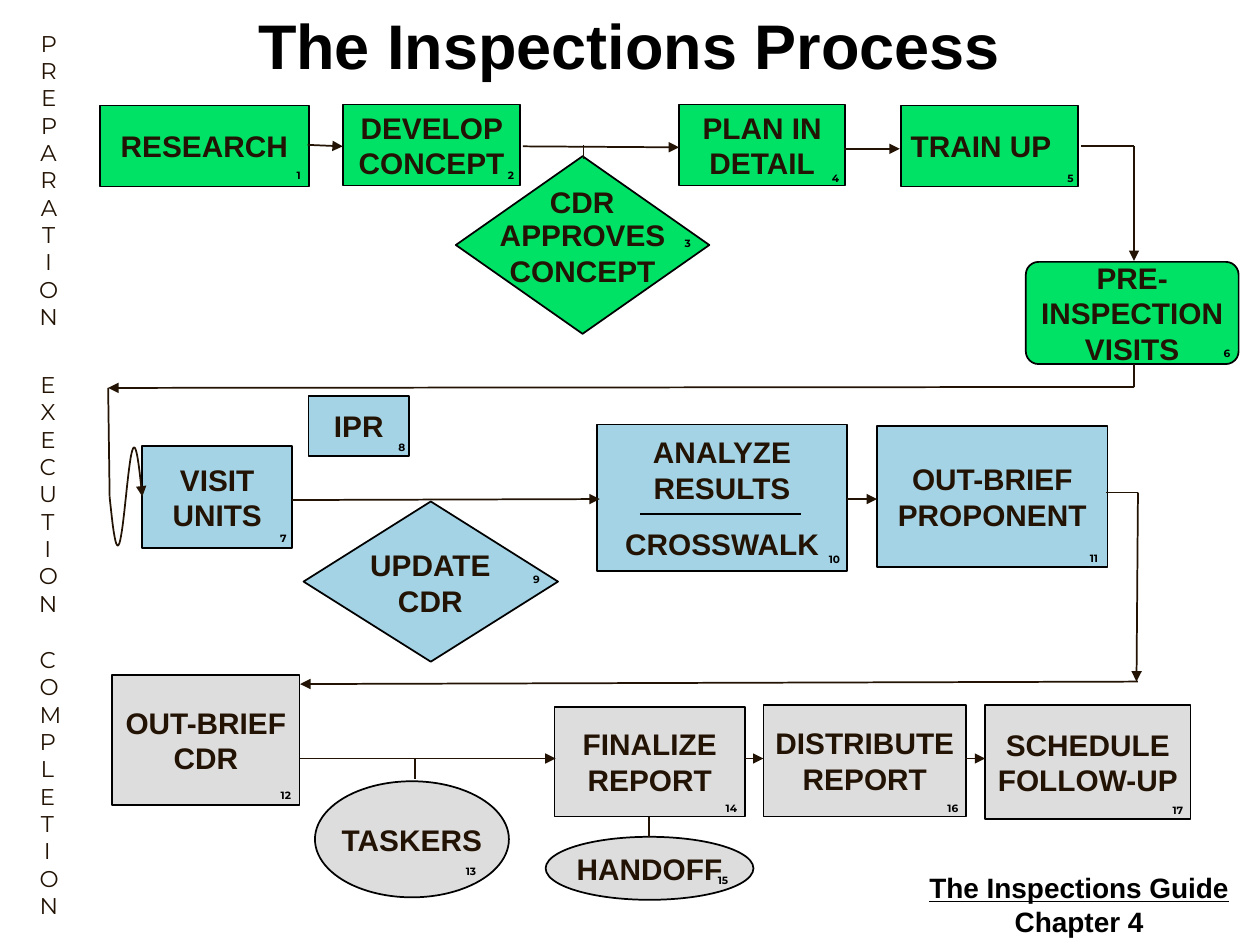
from dataclasses import dataclass
from math import pi, sin

from lxml.etree import SubElement
from pptx import Presentation
from pptx.dml.color import RGBColor as Rgb
from pptx.enum.shapes import MSO_CONNECTOR as Link, MSO_SHAPE as Form
from pptx.enum.text import MSO_ANCHOR as Anchor, MSO_AUTO_SIZE as Fit, PP_ALIGN as Align
from pptx.oxml.ns import qn
from pptx.util import Cm, Pt


@dataclass(frozen=True)
class Theme:
    green: str = "00E266"
    blue: str = "A3D3E4"
    gray: str = "DDDDDD"
    ink: str = "221304"
    black: str = "000000"
    body_font: str = "Arial"
    label_font: str = "Montserrat"
    title: int = 36
    step: int = 17
    footer: int = 16
    phase: int = 13
    number: int = 6


theme = Theme()


def write_text(box, text, size=theme.step, color=theme.ink, font=theme.body_font,
               bold=True, align=Align.CENTER, anchor=Anchor.MIDDLE, wrap=True,
               inset=(0.2, 0.1), fit=Fit.NONE, underline_first=False, last_gap=0):
    frame = box.text_frame
    frame.text = text
    frame.word_wrap = wrap
    frame.auto_size = fit
    frame.vertical_anchor = anchor
    frame.margin_left = frame.margin_right = Cm(inset[0])
    frame.margin_top = frame.margin_bottom = Cm(inset[1])
    for para in frame.paragraphs:
        para.alignment = align
        for span in para.runs:
            span.font.name = font
            span.font.size = Pt(size)
            span.font.bold = bold
            span.font.color.rgb = Rgb.from_string(color)
    if underline_first:
        frame.paragraphs[0].runs[0].font.underline = True
    if last_gap:
        frame.paragraphs[-1].space_before = Pt(last_gap)


def draw_line(shape, color=theme.ink, arrow=False):
    shape.line.color.rgb = Rgb.from_string(color)
    shape.line.width = Pt(1)
    properties = shape._element.spPr
    if arrow:
        SubElement(properties.find(qn("a:ln")), qn("a:tailEnd"), type="triangle")
    SubElement(properties, qn("a:effectLst"))


deck = Presentation()
deck.slide_width, deck.slide_height = Cm(25.4), Cm(19.05)
page = deck.slides.add_slide(deck.slide_layouts[5])
shapes = page.shapes

# Title
title = shapes.title
title.left, title.top, title.width, title.height = Cm(4.95), Cm(0), Cm(15.47), Cm(1.78)
write_text(title, "The Inspections Process", size=theme.title, color=theme.black,
           anchor=Anchor.TOP, wrap=False, inset=(0.25, 0.13), fit=Fit.SHAPE_TO_FIT_TEXT)

# Process steps: form, fill, left, top, width, height, text, text format
one_line = {"wrap": False}
steps = [
    (Form.RECTANGLE, theme.green, 2.01, 2.13, 4.22, 1.63, "RESEARCH", one_line),
    (Form.RECTANGLE, theme.green, 6.91, 2.11, 3.58, 1.63, "DEVELOP CONCEPT", {}),
    (Form.RECTANGLE, theme.green, 13.69, 2.11, 3.35, 1.63, "PLAN IN DETAIL", {}),
    (Form.RECTANGLE, theme.green, 18.16, 2.13, 3.58, 1.63, "TRAIN UP",
     {"wrap": False, "align": Align.LEFT}),
    (Form.DIAMOND, theme.green, 9.19, 3.15, 5.11, 3.58, "", {}),
    (Form.ROUNDED_RECTANGLE, theme.green, 20.68, 5.28, 4.29, 2.06,
     "PRE-INSPECTION VISITS", {}),
    (Form.RECTANGLE, theme.blue, 2.87, 8.99, 3.02, 2.06, "VISIT UNITS", {}),
    (Form.RECTANGLE, theme.blue, 6.22, 7.98, 2.03, 1.22, "IPR", one_line),
    (Form.RECTANGLE, theme.blue, 12.04, 8.56, 5.03, 2.95,
     "ANALYZE\nRESULTS\nCROSSWALK", {"wrap": False, "last_gap": 11.5}),
    (Form.RECTANGLE, theme.blue, 17.68, 8.59, 4.65, 2.84, "OUT-BRIEF PROPONENT", {}),
    (Form.DIAMOND, theme.blue, 6.12, 10.11, 5.13, 3.23, "", {}),
    (Form.RECTANGLE, theme.gray, 2.26, 13.61, 3.78, 2.62, "OUT-BRIEF CDR", {}),
    (Form.OVAL, theme.gray, 6.35, 15.75, 3.91, 2.34, "TASKERS", one_line),
    (Form.RECTANGLE, theme.gray, 11.18, 14.25, 3.84, 2.21, "FINALIZE REPORT", {}),
    (Form.OVAL, theme.gray, 11, 16.87, 4.19, 1.27, "HANDOFF", one_line),
    (Form.RECTANGLE, theme.gray, 15.39, 14.22, 4.09, 2.24, "DISTRIBUTE REPORT", {}),
    (Form.RECTANGLE, theme.gray, 19.86, 14.22, 4.14, 2.29, "SCHEDULE FOLLOW-UP", {}),
]
for form, fill, left, top, width, height, text, text_format in steps:
    step = shapes.add_shape(form, Cm(left), Cm(top), Cm(width), Cm(height))
    if form == Form.ROUNDED_RECTANGLE:
        step.adjustments[0] = 0.125
    step.fill.solid()
    step.fill.fore_color.rgb = Rgb.from_string(fill)
    draw_line(step, theme.black)
    if text:
        write_text(step, text, **text_format)

# Captions over the decision diamonds
for left, top, width, height, text in [
    (10.82, 3.61, 1.83, 0.91, "CDR"),
    (9.42, 4.27, 4.65, 1.65, "APPROVES CONCEPT"),
    (7.14, 10.92, 3.07, 1.65, "UPDATE CDR"),
]:
    caption = shapes.add_textbox(Cm(left), Cm(top), Cm(width), Cm(height))
    write_text(caption, text, anchor=Anchor.TOP, fit=Fit.SHAPE_TO_FIT_TEXT)

# Flow arrows and plain lines: start x, start y, end x, end y
arrows = [
    (6.2, 2.92, 6.91, 2.95), (10.54, 2.95, 13.69, 2.97), (17.02, 3, 18.14, 3),
    (22.86, 2.95, 22.86, 5.26), (22.86, 7.8, 2.18, 7.82),
    (5.89, 10.08, 12.09, 10.06), (17.07, 10.06, 17.68, 10.06),
    (22.94, 9.93, 22.91, 13.74), (22.94, 13.74, 6.05, 13.79),
    (6.05, 15.29, 11.2, 15.29), (15.01, 15.29, 15.39, 15.29),
    (19.46, 15.29, 19.86, 15.29),
]
plain_lines = [
    (22.86, 2.95, 21.79, 2.95), (11.76, 3.2, 11.76, 2.92), (22.86, 7.8, 22.86, 7.34),
    (2.21, 10.01, 2.18, 7.82), (22.3, 9.93, 22.94, 9.93),
    (8.36, 15.7, 8.36, 15.29), (13.08, 16.87, 13.08, 16.46),
]
divider = (12.9, 10.36, 16.15, 10.36)
for ends in arrows + plain_lines + [divider]:
    link = shapes.add_connector(Link.STRAIGHT, *[Cm(value) for value in ends])
    draw_line(link, theme.black if ends == divider else theme.ink, ends in arrows)

# Wave leading into the unit visits
wave_points = [(Cm(2.21 + 0.66 * i / 40), Cm(10.01 + 0.99 * sin(2 * pi * i / 40)))
               for i in range(41)]
builder = shapes.build_freeform(*wave_points[0])
builder.add_line_segments(wave_points[1:], close=False)
wave = builder.convert_to_shape()
wave.fill.background()
draw_line(wave, arrow=True)

# Phase names, running down the left edge
for left, top, width, height, text in [
    (-2.26, 3.35, 6.48, 0.58, "PREPARATION"),
    (-1.65, 9.63, 5.23, 0.56, "EXECUTION"),
    (-1.93, 15.49, 5.77, 0.51, "COMPLETION"),
]:
    phase = shapes.add_textbox(Cm(left), Cm(top), Cm(width), Cm(height))
    phase.rotation = 270
    write_text(phase, text, size=theme.phase, font=theme.label_font, bold=False,
               anchor=Anchor.TOP, fit=Fit.SHAPE_TO_FIT_TEXT)
    phase.text_frame._txBody.bodyPr.set("vert", "eaVert")

# Step numbers, in order
number_spots = [
    (5.77, 3.28), (10.03, 3.28), (13.59, 4.65), (16.56, 3.33), (21.31, 3.33),
    (24.46, 6.86), (5.44, 10.59), (7.82, 8.76), (10.54, 11.43), (16.46, 11.02),
    (21.72, 11), (5.41, 15.77), (9.14, 17.32), (14.38, 16.03), (14.22, 17.5),
    (18.85, 16.03), (23.39, 16.08),
]
for number, (left, top) in enumerate(number_spots, start=1):
    width = 0.46 if number < 10 else 0.89
    tag = shapes.add_textbox(Cm(left), Cm(top), Cm(width), Cm(0.51))
    write_text(tag, str(number), size=theme.number, color=theme.black,
               font=theme.label_font, align=Align.LEFT, anchor=Anchor.TOP,
               inset=(0.25, 0.13), fit=Fit.SHAPE_TO_FIT_TEXT)

# Chapter reference
footer = shapes.add_textbox(Cm(18.11), Cm(17.42), Cm(7.29), Cm(1.63))
write_text(footer, "The Inspections Guide\nChapter 4", size=theme.footer,
           color=theme.black, anchor=Anchor.TOP, inset=(0.25, 0.13),
           fit=Fit.SHAPE_TO_FIT_TEXT, underline_first=True)

deck.save("out.pptx")
